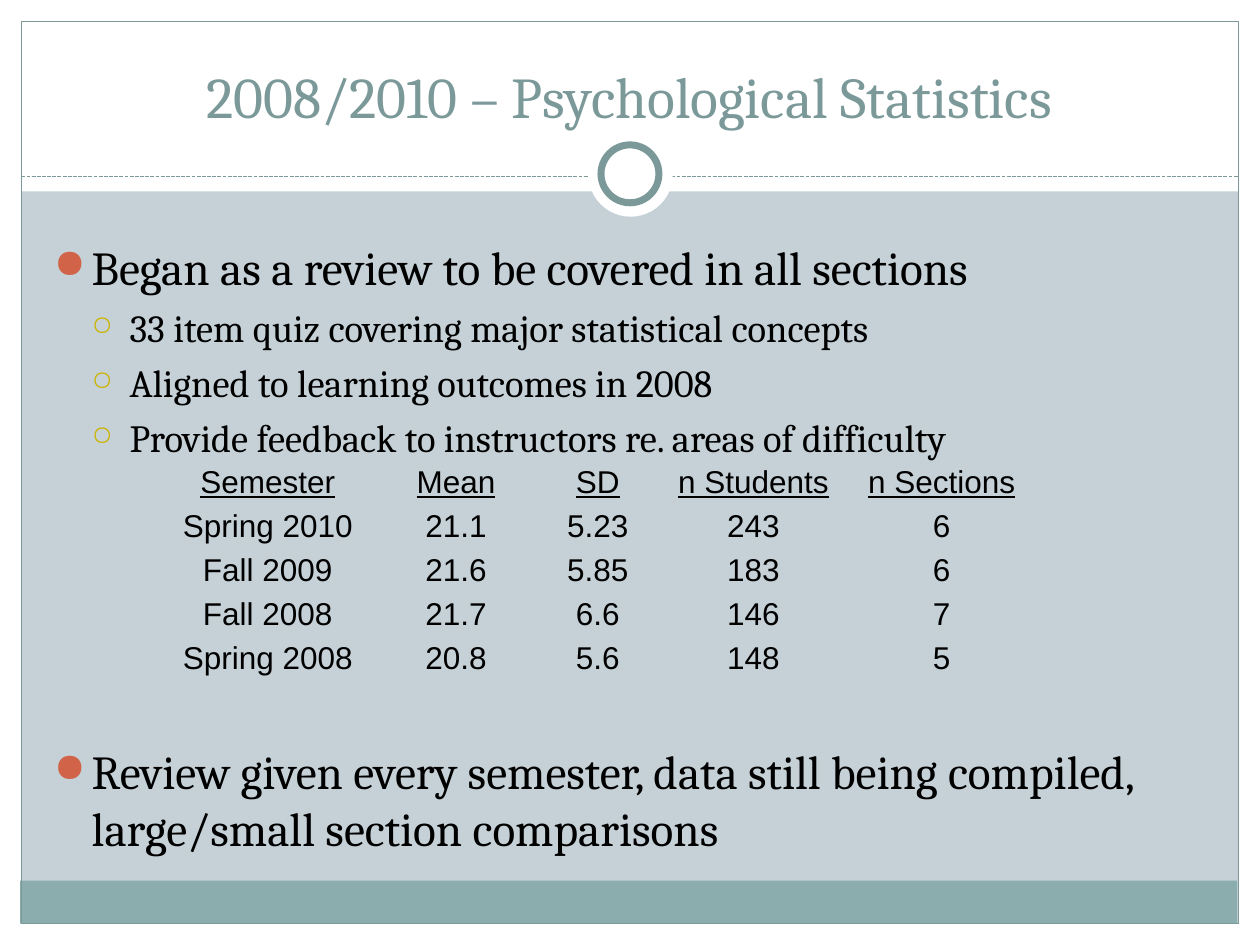
from dataclasses import dataclass
from typing import Optional

import pptx
import pptx.util
from lxml import etree
from pptx.dml.color import RGBColor
from pptx.enum.dml import MSO_LINE
from pptx.enum.shapes import MSO_CONNECTOR, MSO_SHAPE
from pptx.enum.text import MSO_ANCHOR, PP_ALIGN
from pptx.oxml.ns import qn
from pptx.util import Inches, Pt

WHITE = RGBColor(0xFF, 0xFF, 0xFF)
BLACK = RGBColor(0, 0, 0)
BACKGROUND = RGBColor(0xC5, 0xD1, 0xD7)
FOOTER = RGBColor(0x8C, 0xAD, 0xAE)
ACCENT = RGBColor(0x7C, 0x99, 0x9A)
RED = RGBColor(0xD1, 0x63, 0x49)
GOLD = RGBColor(0xCC, 0xB4, 0x00)
NO_GRID_STYLE = "{2D5ABB26-0587-4C30-8999-92F81FD0307C}"


@dataclass
class Block:
    left: float
    top: float
    width: float
    height: float
    fill: Optional[RGBColor] = WHITE
    line_width: float = 0
    kind: MSO_SHAPE = MSO_SHAPE.RECTANGLE


@dataclass
class Level:
    size: float
    indent: float
    space: float
    char: str
    color: RGBColor
    percent: int


@dataclass
class Bullet:
    text: str
    level: int
    gap: float = 0  # extra points above


BLOCKS = [
    Block(0, 7.33, 10, 0.17),
    Block(0, 0, 10, 1.52),
    Block(0, 0, 0.17, 7.5),
    Block(9.83, 0, 0.17, 7.5),
    Block(0.16, 6.99, 9.66, 0.34, FOOTER),
    Block(0.17, 0.17, 9.66, 7.16, None, 0.75),
]
CIRCLES = [
    Block(4.67, 1.05, 0.67, 0.67, kind=MSO_SHAPE.OVAL),
    Block(4.77, 1.15, 0.46, 0.46, line_width=4, kind=MSO_SHAPE.OVAL),
]
LEVELS = [
    Level(27, 0.3, 6.3, "●", RED, 85),
    Level(22, 0.6, 5.2, "○", GOLD, 70),
]
BULLETS = [
    Bullet("Began as a review to be covered in all sections", 0),
    Bullet("33 item quiz covering major statistical concepts", 1),
    Bullet("Aligned to learning outcomes in 2008", 1),
    Bullet("Provide feedback to instructors re. areas of difficulty", 1),
    Bullet("Review given every semester, data still being compiled, "
           "large/small section comparisons", 0, gap=154.5),  # room for the table
]
COLUMN_WIDTHS = [1.59, 1.4, 0.85, 1.62, 1.37]
ROW_HEIGHTS = [0.27, 0.35, 0.35, 0.35, 0.35]
RESULTS = [
    ("Semester", "Mean", "SD", "n Students", "n Sections"),
    ("Spring 2010", "21.1", "5.23", "243", "6"),
    ("Fall 2009", "21.6", "5.85", "183", "6"),
    ("Fall 2008", "21.7", "6.6", "146", "7"),
    ("Spring 2008", "20.8", "5.6", "148", "5"),
]


def add_block(s, b: Block) -> None:
    sp = s.shapes.add_shape(b.kind, Inches(b.left), Inches(b.top),
                            Inches(b.width), Inches(b.height))
    sp.shadow.inherit = False
    if b.fill is None:
        sp.fill.background()
    else:
        sp.fill.solid()
        sp.fill.fore_color.rgb = b.fill
    if b.line_width:
        sp.line.color.rgb = ACCENT
        sp.line.width = Pt(b.line_width)
    else:
        sp.line.fill.background()


def add_divider(s) -> None:
    cx = s.shapes.add_connector(MSO_CONNECTOR.STRAIGHT, Inches(0.17), Inches(1.4),
                                Inches(9.83), Inches(1.4))
    cx.line.color.rgb = ACCENT
    cx.line.width = Pt(0.75)
    cx.line.dash_style = MSO_LINE.SQUARE_DOT
    etree.SubElement(cx._element.spPr, qn("a:effectLst"))


def add_text_frame(s, left: float, top: float, width: float, height: float):
    tf = s.shapes.add_textbox(Inches(left), Inches(top),
                              Inches(width), Inches(height)).text_frame
    tf.word_wrap = True
    return tf


def set_font(p, name: str, size: float, color: RGBColor) -> None:
    p.font.name = name
    p.font.size = Pt(size)
    p.font.color.rgb = color


def add_bullet(p, b: Bullet) -> None:
    lv = LEVELS[b.level]
    p.text = b.text
    p.level = b.level
    p.space_before = Pt(lv.space + b.gap)
    set_font(p, "Cambria", lv.size, BLACK)
    pPr = p._p.get_or_add_pPr()
    pPr.set("marL", str(Inches(lv.indent)))
    pPr.set("indent", str(Inches(-0.3)))
    marks = [etree.Element(qn(tag)) for tag in ("a:buClr", "a:buSzPct", "a:buChar")]
    etree.SubElement(marks[0], qn("a:srgbClr")).set("val", str(lv.color))
    marks[1].set("val", str(lv.percent * 1000))
    marks[2].set("char", lv.char)
    for mark in marks:
        pPr.find(qn("a:defRPr")).addprevious(mark)


def add_results(s) -> None:
    frame = s.shapes.add_table(len(RESULTS), len(COLUMN_WIDTHS), Inches(1.33), Inches(3.67),
                               Inches(sum(COLUMN_WIDTHS)), Inches(sum(ROW_HEIGHTS)))
    table = frame.table
    table.first_row = table.horz_banding = False
    table._tbl.tblPr.find(qn("a:tableStyleId")).text = NO_GRID_STYLE
    for column, width in zip(table.columns, COLUMN_WIDTHS):
        column.width = Inches(width)
    for i, (row, values) in enumerate(zip(table.rows, RESULTS)):
        row.height = Inches(ROW_HEIGHTS[i])
        for cell, value in zip(row.cells, values):
            cell.fill.background()
            cell.vertical_anchor = MSO_ANCHOR.BOTTOM
            cell.margin_left = cell.margin_right = Inches(0.07)
            cell.margin_top = cell.margin_bottom = 0
            p = cell.text_frame.paragraphs[0]
            p.text = value
            p.alignment = PP_ALIGN.CENTER
            set_font(p, "Arial", 18, BLACK)
            p.font.underline = i == 0


def main() -> None:
    prs = pptx.Presentation()
    prs.slide_width, prs.slide_height = Inches(10), Inches(7.5)
    s = prs.slides.add_slide(prs.slide_layouts[6])
    s.background.fill.solid()
    s.background.fill.fore_color.rgb = BACKGROUND

    # Frame, divider and ring
    for block in BLOCKS:
        add_block(s, block)
    add_divider(s)
    for circle in CIRCLES:
        add_block(s, circle)

    # Title
    tf = add_text_frame(s, 0.33, 0.25, 9.33, 0.83)
    tf.vertical_anchor = MSO_ANCHOR.BOTTOM
    p = tf.paragraphs[0]
    p.text = "2008/2010 – Psychological Statistics"
    p.alignment = PP_ALIGN.CENTER
    set_font(p, "Cambria", 33, ACCENT)

    # Bullets
    tf = add_text_frame(s, 0.33, 1.84, 9.3, 4.75)
    for i, bullet in enumerate(BULLETS):
        add_bullet(tf.add_paragraph() if i else tf.paragraphs[0], bullet)

    # Results by semester
    add_results(s)
    prs.save("out.pptx")


if __name__ == "__main__":
    main()
